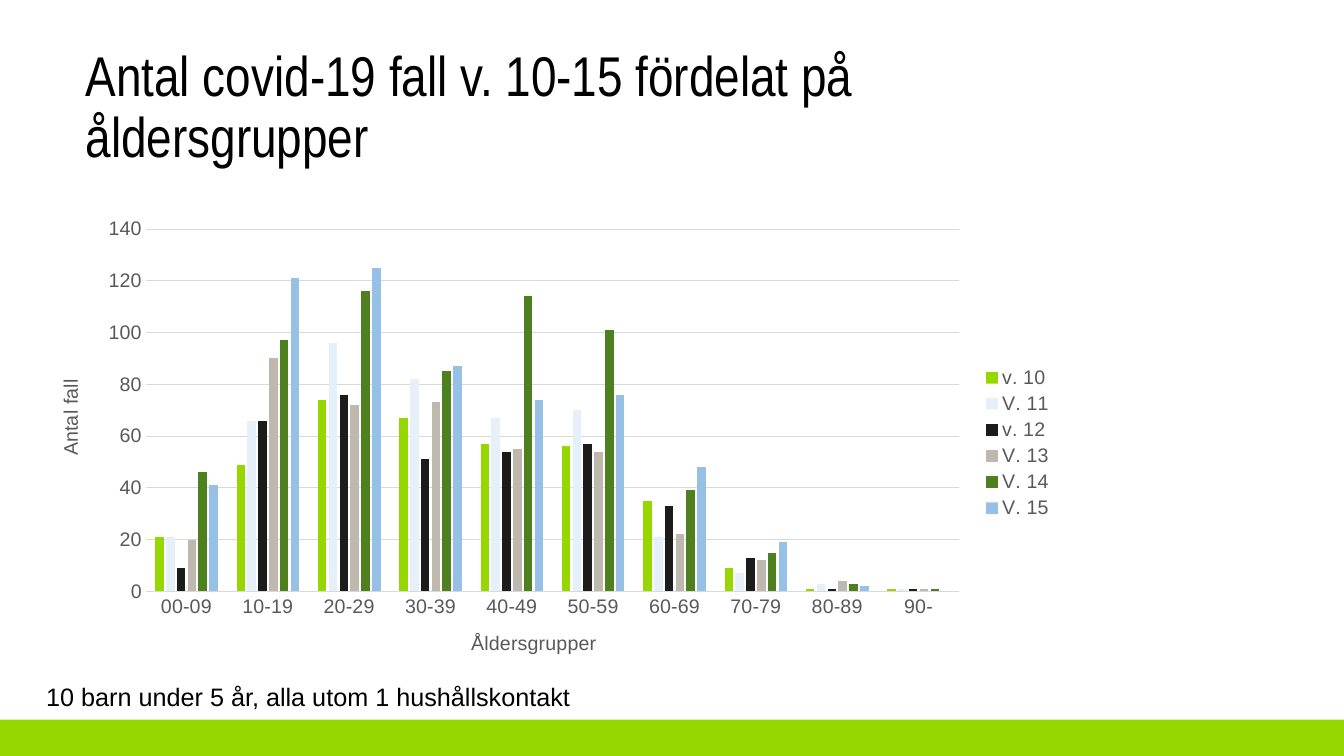
from dataclasses import dataclass

from pptx import Presentation
from pptx.chart.data import CategoryChartData
from pptx.dml.color import RGBColor
from pptx.enum.chart import XL_CHART_TYPE, XL_LEGEND_POSITION, XL_TICK_MARK
from pptx.enum.shapes import MSO_SHAPE
from pptx.util import Inches, Pt

CLUSTERED = XL_CHART_TYPE.COLUMN_CLUSTERED
LEGEND_RIGHT = XL_LEGEND_POSITION.RIGHT
NO_TICK = XL_TICK_MARK.NONE
RECT = MSO_SHAPE.RECTANGLE


@dataclass(frozen=True)
class Theme:
    green: str = "97D700"
    text: str = "000000"
    muted: str = "595959"
    grid: str = "D9D9D9"
    title_font: str = "Arial Narrow"
    body_font: str = "Arial"
    title_size: int = 40
    note_size: int = 18
    chart_size: int = 14
    line_width: float = 0.75


THEME = Theme()

AGE_GROUPS = ["00-09", "10-19", "20-29", "30-39", "40-49",
              "50-59", "60-69", "70-79", "80-89", "90-"]
WEEKS = [
    ("v. 10", THEME.green, [21, 49, 74, 67, 57, 56, 35, 9, 1, 1]),
    ("V. 11", "E6F0F9", [21, 66, 96, 82, 67, 70, 21, 7, 3, 1]),
    ("v. 12", "1C1C1C", [9, 66, 76, 51, 54, 57, 33, 13, 1, 1]),
    ("V. 13", "BFB8AF", [20, 90, 72, 73, 55, 54, 22, 12, 4, 1]),
    ("V. 14", "4E801F", [46, 97, 116, 85, 114, 101, 39, 15, 3, 1]),
    ("V. 15", "96C0E6", [41, 121, 125, 87, 74, 76, 48, 19, 2, 0]),
]


def rgb(value):
    return RGBColor.from_string(value)


def set_font(font, name, size, color):
    font.name = name
    font.size = Pt(size)
    font.bold = False
    font.color.rgb = rgb(color)


def set_line(line):
    line.color.rgb = rgb(THEME.grid)
    line.width = Pt(THEME.line_width)


def add_band(s, box):
    sp = s.shapes.add_shape(RECT, *map(Inches, box))
    sp.shadow.inherit = False
    sp.fill.solid()
    sp.fill.fore_color.rgb = rgb(THEME.green)
    sp.line.fill.background()


def add_text(s, box, text, font, size, line_spacing=1.0):
    tf = s.shapes.add_textbox(*map(Inches, box)).text_frame
    tf.word_wrap = True
    p = tf.paragraphs[0]
    p.line_spacing = line_spacing
    r = p.add_run()
    r.text = text
    set_font(r.font, font, size, THEME.text)


def style_axis(axis, title):
    axis.major_tick_mark = axis.minor_tick_mark = NO_TICK
    set_font(axis.tick_labels.font, THEME.body_font, THEME.chart_size, THEME.muted)
    r = axis.axis_title.text_frame.paragraphs[0].add_run()
    r.text = title
    set_font(r.font, THEME.body_font, THEME.chart_size, THEME.muted)


def add_case_chart(s, box):
    data = CategoryChartData()
    data.categories = AGE_GROUPS
    for name, _, cases in WEEKS:
        data.add_series(name, cases)
    chart = s.shapes.add_chart(CLUSTERED, *map(Inches, box), data).chart
    chart.has_title = False
    set_font(chart.font, THEME.body_font, THEME.chart_size, THEME.text)

    plot = chart.plots[0]
    plot.gap_width = 219
    plot.overlap = -27
    plot.vary_by_categories = False
    for series, (_, color, _) in zip(plot.series, WEEKS):
        series.format.fill.solid()
        series.format.fill.fore_color.rgb = rgb(color)

    ages, cases = chart.category_axis, chart.value_axis
    style_axis(ages, "Åldersgrupper")
    set_line(ages.format.line)
    style_axis(cases, "Antal fall")
    cases.minimum_scale, cases.maximum_scale, cases.major_unit = 0, 140, 20
    cases.format.line.fill.background()
    set_line(cases.major_gridlines.format.line)

    chart.has_legend = True
    chart.legend.position = LEGEND_RIGHT
    chart.legend.include_in_layout = False
    set_font(chart.legend.font, THEME.body_font, THEME.chart_size, THEME.muted)


def main():
    prs = Presentation()
    prs.slide_width, prs.slide_height = Inches(13.33), Inches(7.5)
    s = prs.slides.add_slide(prs.slide_layouts[6])
    add_band(s, (0, 7.14, 13.33, 0.36))
    add_text(s, (0.75, 0.43, 8.45, 0.71),
             "Antal covid-19 fall v. 10-15 fördelat på åldersgrupper",
             THEME.title_font, THEME.title_size, 0.9)
    add_case_chart(s, (0.36, 2.07, 10.19, 4.65))
    add_text(s, (0.36, 6.71, 6.13, 0.4),
             "10 barn under 5 år, alla utom 1 hushållskontakt",
             THEME.body_font, THEME.note_size)
    prs.save("out.pptx")


if __name__ == "__main__":
    main()
